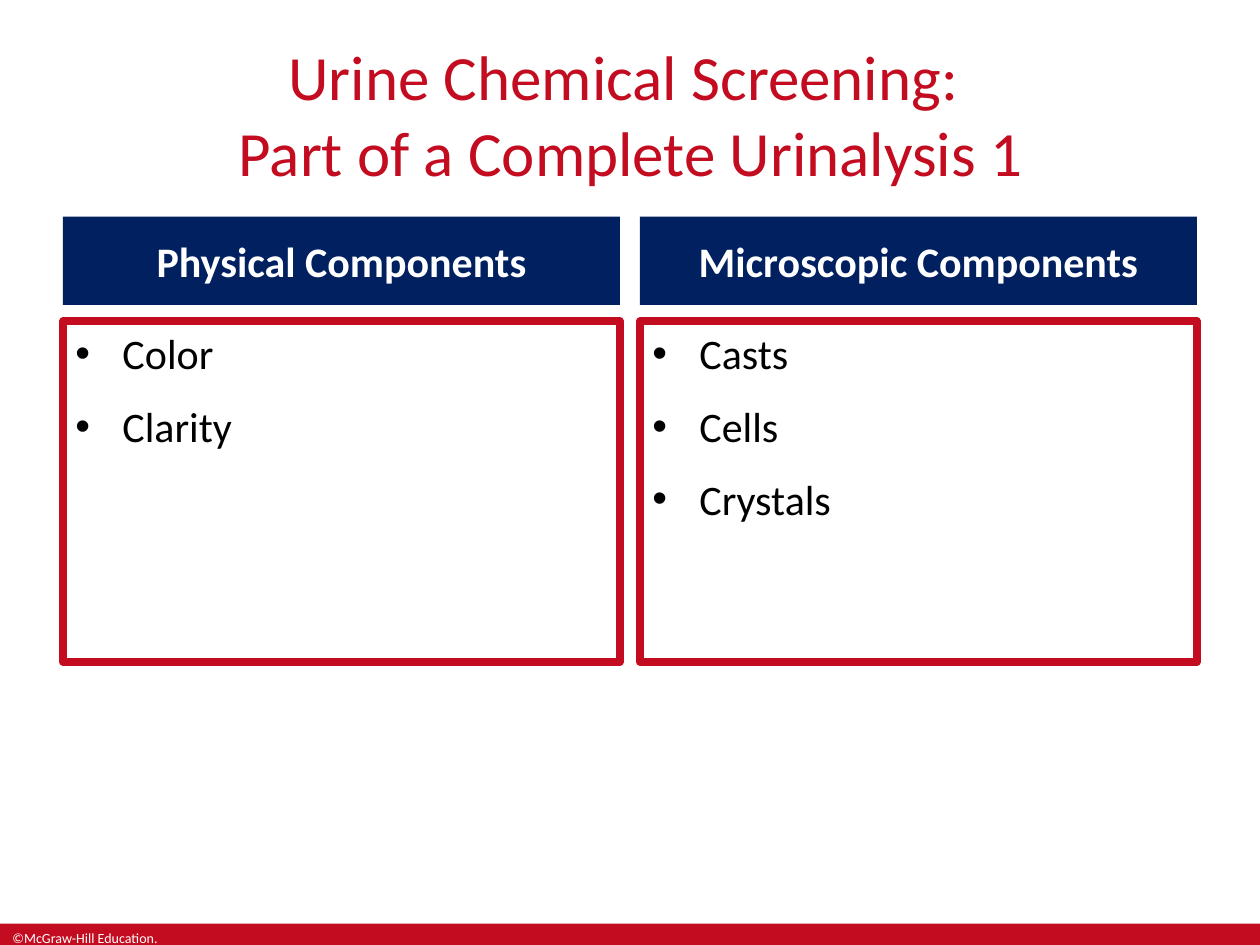
from pptx import Presentation
from pptx.dml.color import RGBColor
from pptx.enum.shapes import MSO_SHAPE
from pptx.enum.text import MSO_ANCHOR, PP_ALIGN
from pptx.oxml.ns import qn
from pptx.util import Cm, Pt
from lxml import etree

RECTANGLE = MSO_SHAPE.RECTANGLE
TOP, MIDDLE = MSO_ANCHOR.TOP, MSO_ANCHOR.MIDDLE
LEFT, CENTER = PP_ALIGN.LEFT, PP_ALIGN.CENTER

THEME = {
    "font": "Calibri",
    "red": RGBColor(0xC3, 0x0C, 0x20),
    "navy": RGBColor(0x00, 0x20, 0x60),
    "white": RGBColor(0xFF, 0xFF, 0xFF),
    "black": RGBColor(0x00, 0x00, 0x00),
    "title": Pt(36),
    "body": Pt(24),
    "footer": Pt(8),
}

COLUMNS = [
    ("Physical Components", ["Color", "Clarity"]),
    ("Microscopic Components", ["Casts", "Cells", "Crystals"]),
]


def add_box(place, fill=None, line=None):
    box = page.shapes.add_shape(RECTANGLE, *[Cm(length) for length in place])
    box.shadow.inherit = False
    if fill is None:
        box.fill.background()
    else:
        box.fill.solid()
        box.fill.fore_color.rgb = fill
    if line is None:
        box.line.fill.background()
    else:
        box.line.color.rgb = line
        box.line.width = Pt(4.5)
    return box


def write(box, lines, size, color, align=LEFT, anchor=TOP, bold=False, bullet=False):
    frame = box.text_frame
    frame.word_wrap = True
    frame.vertical_anchor = anchor
    for index, text in enumerate(lines):
        para = frame.add_paragraph() if index else frame.paragraphs[0]
        para.text = text
        para.alignment = align
        if bullet:
            para.space_before = Pt(4.8 if index else 0)
            para.space_after = Pt(8)
            properties = para._p.get_or_add_pPr()
            properties.set("marL", str(Cm(0.95)))
            properties.set("indent", str(-Cm(0.95)))
            etree.SubElement(properties, qn("a:buFont"), typeface="Arial")
            etree.SubElement(properties, qn("a:buChar"), char="•")
        style = {"name": THEME["font"], "size": THEME[size], "bold": bold}
        for span in para.runs:
            for name, value in style.items():
                setattr(span.font, name, value)
            span.font.color.rgb = THEME[color]


deck = Presentation()
deck.slide_width, deck.slide_height = Cm(25.4), Cm(19.05)
page = deck.slides.add_slide(deck.slide_layouts[6])

add_box((0, 18.62, 25.4, 0.43), fill=THEME["red"])
footer = page.shapes.add_textbox(Cm(0), Cm(18.62), Cm(3.81), Cm(0.43))
write(footer, ["©McGraw-Hill Education."], "footer", "white")

title = page.shapes.add_textbox(Cm(-0.05), Cm(0.64), Cm(25.53), Cm(1.7))
write(title, ["Urine Chemical Screening: \vPart of a Complete Urinalysis 1"],
      "title", "red", align=CENTER)

margin, width, gap = 1.27, 11.23, 0.4
for column, (heading, items) in enumerate(COLUMNS):
    left = margin + column * (width + gap)
    header = add_box((left, 4.37, width, 1.78), fill=THEME["navy"])
    write(header, [heading], "body", "white", align=CENTER, anchor=MIDDLE, bold=True)
    panel = add_box((left, 6.48, width, 6.86), line=THEME["red"])
    write(panel, items, "body", "black", bullet=True)

deck.save("out.pptx")
